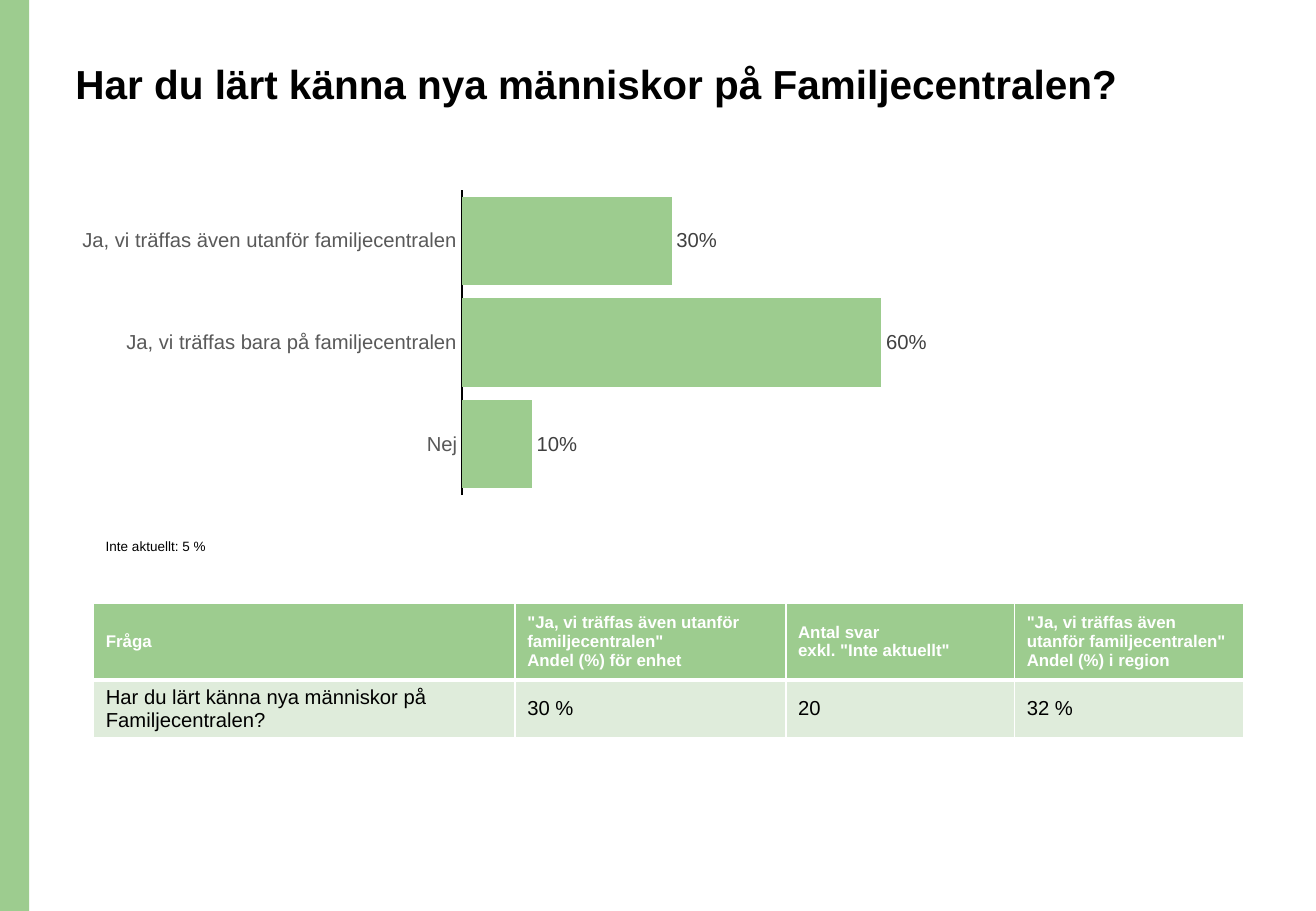
from collections import namedtuple
from dataclasses import dataclass

from lxml import etree
from pptx import Presentation
from pptx import util as u
from pptx.chart import data as cd
from pptx.dml.color import RGBColor
from pptx.enum import chart as ch, shapes, text
from pptx.oxml import ns

Box = namedtuple("Box", "left top width height")


@dataclass(frozen=True)
class Theme:
    face: str = "Arial"
    green: str = "9DCC8F"
    pale: str = "DFECDB"
    white: str = "FFFFFF"
    black: str = "000000"
    grey: str = "595959"
    dark: str = "404040"
    title: int = 24
    body: int = 12
    head: int = 10
    note: int = 8


THEME = Theme()
QUERY = "Har du lärt känna nya människor på Familjecentralen?"
OUTSIDE = "Ja, vi träffas även utanför familjecentralen"
SHARES = {
    OUTSIDE: 0.3,
    "Ja, vi träffas bara på familjecentralen": 0.6,
    "Nej": 0.1,
}
ROWS = [
    [
        ["Fråga"],
        [f'"{OUTSIDE}"', "Andel (%) för enhet"],
        ["Antal svar", 'exkl. "Inte aktuellt"'],
        [f'"{OUTSIDE}"', "Andel (%) i region"],
    ],
    [[QUERY], ["30 %"], ["20"], ["32 %"]],
]


def shade(fill, hue):
    fill.solid()
    fill.fore_color.rgb = RGBColor.from_string(hue)


def style(font, size, hue, bold=False):
    font.name = THEME.face
    font.size = u.Pt(size)
    font.bold = bold
    font.color.rgb = RGBColor.from_string(hue)


def write(frame, lines, size, hue=THEME.black, bold=False, space=None):
    frame.word_wrap = True
    for i, line in enumerate(lines):
        para = frame.add_paragraph() if i else frame.paragraphs[0]
        para.alignment = text.PP_ALIGN.LEFT
        para.line_spacing = space
        run = para.add_run()
        run.text = line
        style(run.font, size, hue, bold)


def add_bar(slide, box):
    bar = slide.shapes.add_shape(shapes.MSO_SHAPE.RECTANGLE, *box)
    bar.shadow.inherit = False
    shade(bar.fill, THEME.green)
    bar.line.fill.background()


def add_title(slide, box):
    title = slide.shapes.title
    title.left, title.top, title.width, title.height = box
    frame = title.text_frame
    frame.auto_size = text.MSO_AUTO_SIZE.NONE
    frame.vertical_anchor = text.MSO_ANCHOR.TOP
    write(frame, [QUERY], THEME.title, bold=True, space=0.9)


def set_plot(chart, x, y, w, h):
    area = chart._chartSpace.chart.plotArea
    for old in area.findall(ns.qn("c:layout")):
        area.remove(old)
    layout = etree.Element(ns.qn("c:layout"))
    manual = etree.SubElement(layout, ns.qn("c:manualLayout"))
    parts = dict(layoutTarget="inner", xMode="edge", yMode="edge", x=x, y=y, w=w, h=h)
    for tag, val in parts.items():
        etree.SubElement(manual, ns.qn(f"c:{tag}")).set("val", str(val))
    area.insert(0, layout)


def add_graph(slide, box):
    data = cd.CategoryChartData(number_format="0%")
    data.categories = list(SHARES)
    data.add_series("Series 1", list(SHARES.values()))
    chart = slide.shapes.add_chart(ch.XL_CHART_TYPE.BAR_CLUSTERED, *box, data).chart
    chart.has_legend = False
    chart.has_title = False
    style(chart.font, THEME.head, THEME.black)
    set_plot(chart, 0.44, 0.02, 0.54, 0.96)

    cats = chart.category_axis
    cats.reverse_order = True
    cats.major_tick_mark = cats.minor_tick_mark = ch.XL_TICK_MARK.NONE
    style(cats.tick_labels.font, THEME.body, THEME.grey)
    shade(cats.format.line.fill, THEME.black)
    cats.format.line.width = u.Pt(0.75)

    vals = chart.value_axis
    vals.minimum_scale, vals.maximum_scale = 0, 0.7
    vals.has_major_gridlines = False
    vals.visible = False

    plot = chart.plots[0]
    plot.gap_width = 15
    plot.vary_by_categories = False
    shade(plot.series[0].format.fill, THEME.green)
    plot.has_data_labels = True
    tags = plot.data_labels
    tags.show_value = True
    tags.number_format = "0%"
    tags.number_format_is_linked = False
    tags.position = ch.XL_LABEL_POSITION.OUTSIDE_END
    style(tags.font, THEME.body, THEME.dark)


def add_note(slide, box):
    frame = slide.shapes.add_textbox(*box).text_frame
    write(frame, ["Inte aktuellt: 5 %"], THEME.note, space=1.5)
    frame.auto_size = text.MSO_AUTO_SIZE.SHAPE_TO_FIT_TEXT


def edge(cell, **widths):
    props = cell._tc.get_or_add_tcPr()
    for i, (side, width) in enumerate(widths.items()):
        line = etree.Element(ns.qn(f"a:ln{side}"), w=str(u.Pt(width)))
        fill = etree.SubElement(line, ns.qn("a:solidFill"))
        etree.SubElement(fill, ns.qn("a:srgbClr"), val=THEME.white)
        props.insert(i, line)


def add_grid(slide, box):
    grid = slide.shapes.add_table(len(ROWS), len(ROWS[0]), *box).table
    grid.horz_banding = False
    for col, width in zip(grid.columns, (8.81, 5.66, 4.78, 4.78)):
        col.width = u.Cm(width)
    for row, height in zip(grid.rows, (1.6, 1.17)):
        row.height = u.Cm(height)
    for r, row in enumerate(ROWS):
        head = r == 0
        for c, lines in enumerate(row):
            cell = grid.cell(r, c)
            cell.vertical_anchor = text.MSO_ANCHOR.MIDDLE
            shade(cell.fill, THEME.green if head else THEME.pale)
            edge(cell, L=1, R=1, T=1 if head else 3, B=3 if head else 1)
            write(
                cell.text_frame,
                lines,
                THEME.head if head else THEME.body,
                hue=THEME.white if head else THEME.black,
                bold=head,
            )


def place(*sides):
    return Box(*map(u.Cm, sides))


def main():
    deck = Presentation()
    deck.slide_width, deck.slide_height = u.Cm(27.51), u.Cm(19.05)
    slide = deck.slides.add_slide(deck.slide_layouts[5])
    add_bar(slide, place(0, 0, 0.61, 19.05))
    add_title(slide, place(1.32, 1.22, 23.72, 2.59))
    add_grid(slide, place(1.96, 12.62, 24.03, 2.77))
    add_note(slide, place(1.96, 10.95, 5.33, 0.71))
    add_graph(slide, place(1.32, 3.84, 18.95, 6.65))
    deck.save("out.pptx")


if __name__ == "__main__":
    main()
